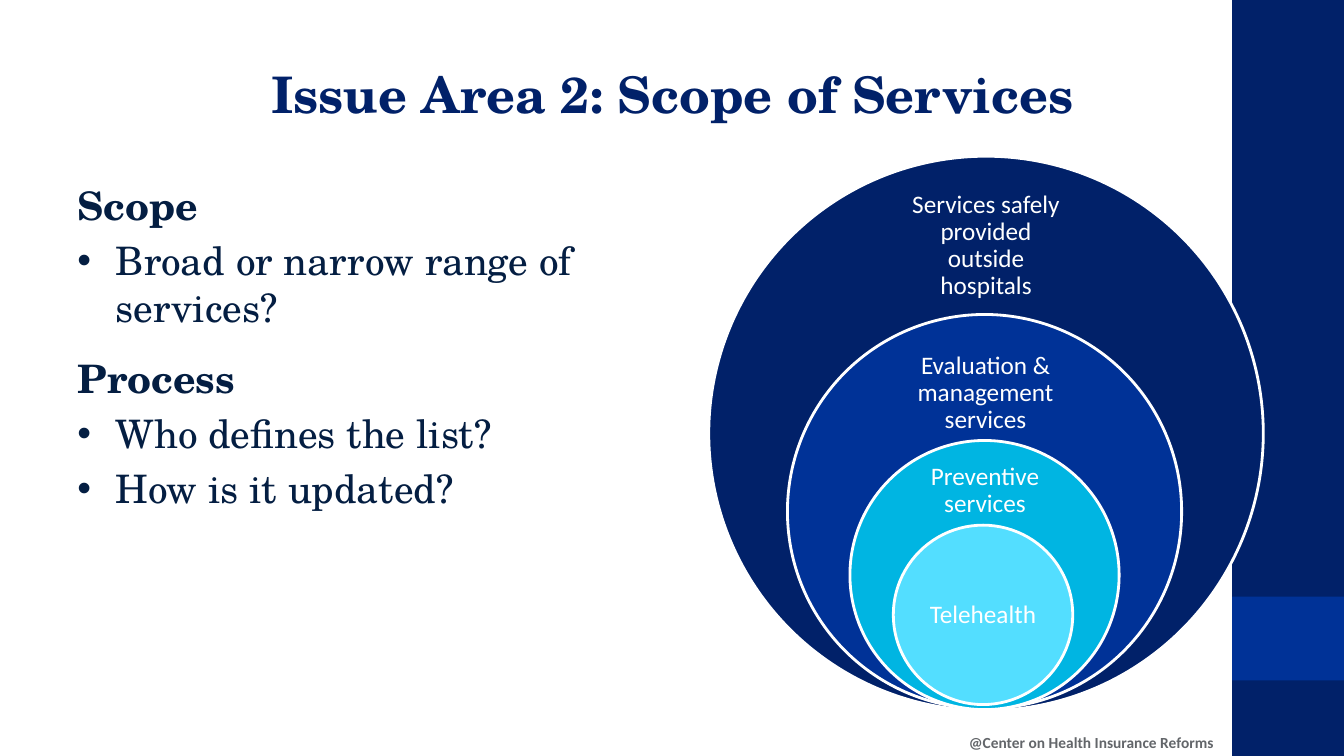
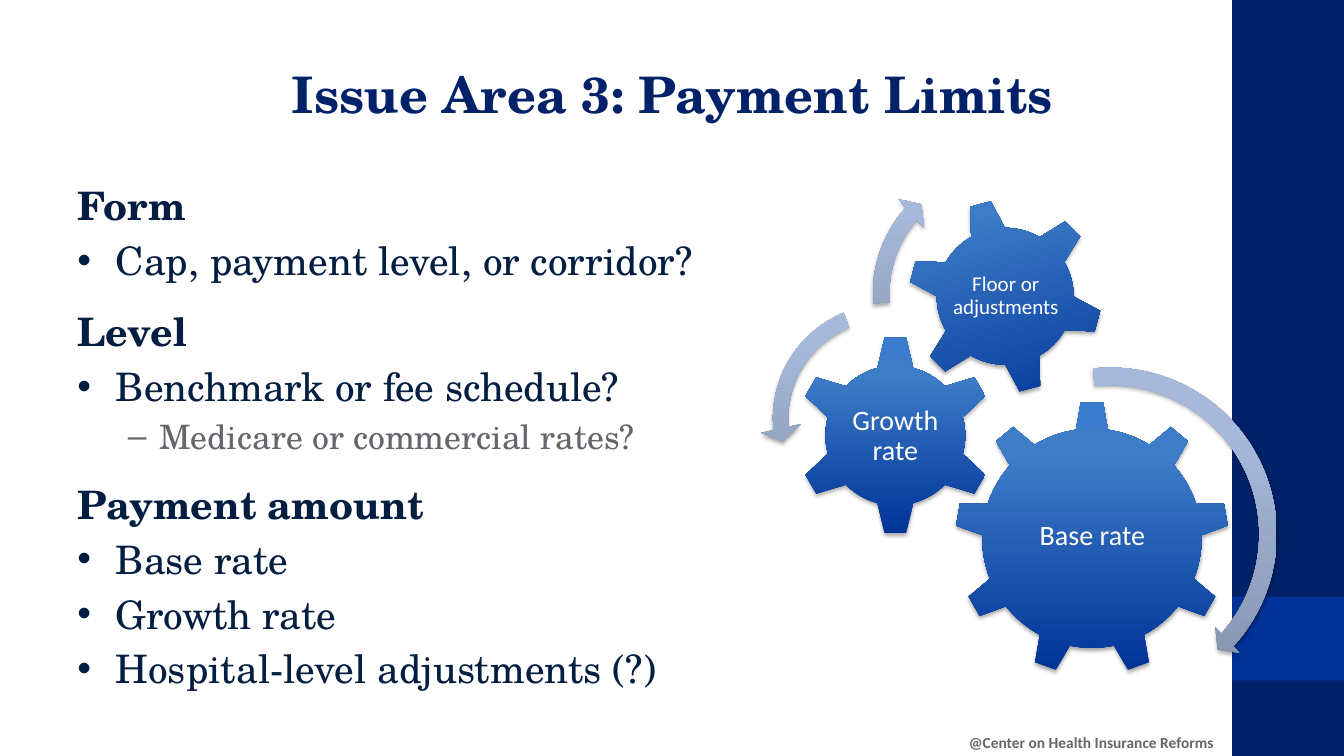
from lxml import etree
from pptx import Presentation
from pptx.dml.color import RGBColor
from pptx.enum.shapes import MSO_SHAPE as Geometry
from pptx.enum.text import MSO_ANCHOR as Anchor, PP_ALIGN as Align
from pptx.oxml import parse_xml
from pptx.oxml.ns import nsdecls, qn
from pptx.util import Inches, Pt

NAVY, BLUE, CYAN, SKY = "012169", "003297", "00B5E2", "53DEFF"
INK, GRAY, WHITE = "041E42", "63666A", "FFFFFF"
SERIF, SANS = "TeX Gyre Schola", "Calibri"
GEAR_STOPS = [(0, BLUE), (80, "3D7CC7"), (100, "3A7CCB")]
ARROW_STOPS = [(0, "818FA8"), (80, "A7B9DA"), (100, "A7BADC")]

# Outline styles: size, colour, bold, bullet, left indent, hanging, level
OUTLINE = {
    "heading": (28, INK, True, None, 0, 0, 0),
    "bullet": (28, INK, False, "•", 0.38, 0.38, 0),
    "dash": (24, GRAY, False, "–", 0.81, 0.31, 1),
}
HEADING_GAP = 17


def rgb(value):
    return RGBColor.from_string(value)


class SlideBuilder:
    """Holds the deck, the shared style and the current slide."""

    def __init__(self):
        self.deck = Presentation()
        self.deck.slide_width = Inches(13.33)
        self.deck.slide_height = Inches(7.5)
        self.slide = None

    def start(self, title):
        self.slide = self.deck.slides.add_slide(self.deck.slide_layouts[5])
        # Footer and side bands
        self.text("@Center on Health Insurance Reforms", (9.51, 7.22, 2.72, 0.29),
                  11, GRAY, bold=True, align=Align.LEFT, anchor=Anchor.TOP,
                  inset=(0.1, 0.05))
        self.shape(Geometry.RECTANGLE, (12.22, 0, 1.11, 7.5), NAVY)
        self.shape(Geometry.RECTANGLE, (12.22, 5.92, 1.11, 0.83), BLUE)
        # Title
        box = self.slide.shapes.title
        box.left, box.top, box.width, box.height = map(Inches, (0.67, 0.3, 12, 1.25))
        frame = box.text_frame
        frame.text = title
        frame.vertical_anchor = Anchor.MIDDLE
        frame.paragraphs[0].alignment = Align.CENTER
        self.font(frame.paragraphs[0], 36, NAVY, SERIF, True)

    def font(self, para, size, color, name=SANS, bold=False):
        for span in para.runs:
            span.font.size = Pt(size)
            span.font.color.rgb = rgb(color)
            span.font.name = name
            span.font.bold = bold

    def text(self, words, place, size, color=WHITE, bold=False,
             align=Align.CENTER, anchor=Anchor.MIDDLE, inset=(0, 0), spacing=1.0):
        frame = self.slide.shapes.add_textbox(*map(Inches, place)).text_frame
        frame.word_wrap = True
        frame.vertical_anchor = anchor
        frame.margin_left = frame.margin_right = Inches(inset[0])
        frame.margin_top = frame.margin_bottom = Inches(inset[1])
        frame.text = words
        para = frame.paragraphs[0]
        para.alignment = align
        para.line_spacing = spacing
        self.font(para, size, color, bold=bold)

    def label(self, words, place, size):
        self.text(words, place, size, spacing=0.9)

    def outline(self, items, width):
        box = self.slide.shapes.add_textbox(*map(Inches, (0.67, 1.75, width, 4.95)))
        frame = box.text_frame
        frame.word_wrap = True
        for index, (kind, words) in enumerate(items):
            size, color, bold, bullet, left, hanging, level = OUTLINE[kind]
            para = frame.add_paragraph() if index else frame.paragraphs[0]
            para.text = words
            para.level = level
            if index:
                para.space_before = Pt(HEADING_GAP if kind == "heading" else size * 0.2)
            if bullet:
                props = para._p.get_or_add_pPr()
                props.set("marL", str(Inches(left)))
                props.set("indent", str(-Inches(hanging)))
                etree.SubElement(props, qn("a:buFont")).set("typeface", "Arial")
                etree.SubElement(props, qn("a:buChar")).set("char", bullet)
            self.font(para, size, color, SERIF, bold)

    def shape(self, geometry, place, fill=None, line=None):
        shape = self.slide.shapes.add_shape(geometry, *map(Inches, place))
        shape.shadow.inherit = False
        if fill:
            shape.fill.solid()
            shape.fill.fore_color.rgb = rgb(fill)
        if line:
            shape.line.color.rgb = rgb(line)
            shape.line.width = Pt(2)
        else:
            shape.line.fill.background()
        return shape

    def shaded(self, geometry, left, top, size, stops, rotation=0, adjust=()):
        """Square shape with an upward gradient and a soft shadow."""
        shape = self.shape(geometry, (left, top, size, size))
        shape.rotation = rotation
        for index, value in enumerate(adjust):
            shape.adjustments[index] = value
        # Three-stop gradient
        shape.fill.gradient()
        props = shape._element.spPr
        marks = "".join(f'<a:gs pos="{position * 1000}"><a:srgbClr val="{color}"/></a:gs>'
                        for position, color in stops)
        props.replace(props.find(qn("a:gradFill")), parse_xml(
            f'<a:gradFill {nsdecls("a")} rotWithShape="1"><a:gsLst>{marks}</a:gsLst>'
            '<a:lin ang="16200000" scaled="0"/></a:gradFill>'))
        # Shadow
        props.find(qn("a:effectLst")).append(parse_xml(
            f'<a:outerShdw {nsdecls("a")} blurRad="{Pt(3.1)}" dist="{Pt(1.8)}" '
            'dir="5400000" rotWithShape="0"><a:srgbClr val="000000">'
            '<a:alpha val="35000"/></a:srgbClr></a:outerShdw>'))


def scope_slide(builder):
    builder.start("Issue Area 2: Scope of Services")
    builder.outline([
        ("heading", "Scope"),
        ("bullet", "Broad or narrow range of services?"),
        ("heading", "Process"),
        ("bullet", "Who defines the list?"),
        ("bullet", "How is it updated?"),
    ], 6.63)
    # Nested circles, largest first: left, top, size, fill, label, label place
    circles = [
        (7.03, 1.55, 5.5, NAVY, "Services safely provided outside hospitals",
         (9.01, 2.03, 1.54, 0.82)),
        (7.81, 3.12, 3.91, BLUE, "Evaluation & management services",
         (9.09, 3.55, 1.37, 0.7)),
        (8.43, 4.37, 2.67, CYAN, "Preventive services", (9.15, 4.57, 1.24, 0.6)),
        (8.86, 5.21, 1.78, SKY, "Telehealth", (9.12, 5.66, 1.26, 0.89)),
    ]
    for left, top, size, fill, words, place in circles:
        builder.shape(Geometry.OVAL, (left, top, size, size), fill, WHITE)
        builder.label(words, place, 18)


def payment_slide(builder):
    builder.start("Issue Area 3: Payment Limits")
    builder.outline([
        ("heading", "Form"),
        ("bullet", "Cap, payment level, or corridor?"),
        ("heading", "Level"),
        ("bullet", "Benchmark or fee schedule?"),
        ("dash", "Medicare or commercial rates?"),
        ("heading", "Payment amount"),
        ("bullet", "Base rate"),
        ("bullet", "Growth rate"),
        ("bullet", "Hospital-level adjustments (?)"),
    ], 6.76)
    # Gears: geometry, left, top, size, rotation, label, label place, text size
    gears = [
        (Geometry.GEAR_9, 9.47, 3.98, 2.72, 0, "Base rate",
         (10.02, 4.62, 1.63, 1.4), 20),
        (Geometry.GEAR_6, 7.89, 3.33, 1.98, 0, "Growth rate",
         (8.39, 3.84, 0.98, 0.98), 20),
        (Geometry.GEAR_6, 9, 1.97, 1.94, 345, "Floor or adjustments",
         (9.43, 2.39, 1.09, 1.09), 15),
    ]
    for geometry, left, top, size, rotation, words, place, points in gears:
        builder.shaded(geometry, left, top, size, GEAR_STOPS, rotation)
        builder.label(words, place, points)
    # Turning arrows: geometry, left, top, size, adjustments
    arrows = [
        (Geometry.CIRCULAR_ARROW, 9.27, 3.56, 3.48, (0.05, 2.99, 25.24, 158.45, 0.05)),
        (Geometry.LEFT_CIRCULAR_ARROW, 7.54, 2.89, 2.53,
         (0.06, 4.3, 104.89, 148.38, 0.08)),
        (Geometry.CIRCULAR_ARROW, 8.55, 1.54, 2.73, (0.06, 3.94, 133.14, 105.08, 0.07)),
    ]
    for geometry, left, top, size, adjust in arrows:
        builder.shaded(geometry, left, top, size, ARROW_STOPS, adjust=adjust)


def main():
    builder = SlideBuilder()
    scope_slide(builder)
    payment_slide(builder)
    builder.deck.save("out.pptx")


if __name__ == "__main__":
    main()
